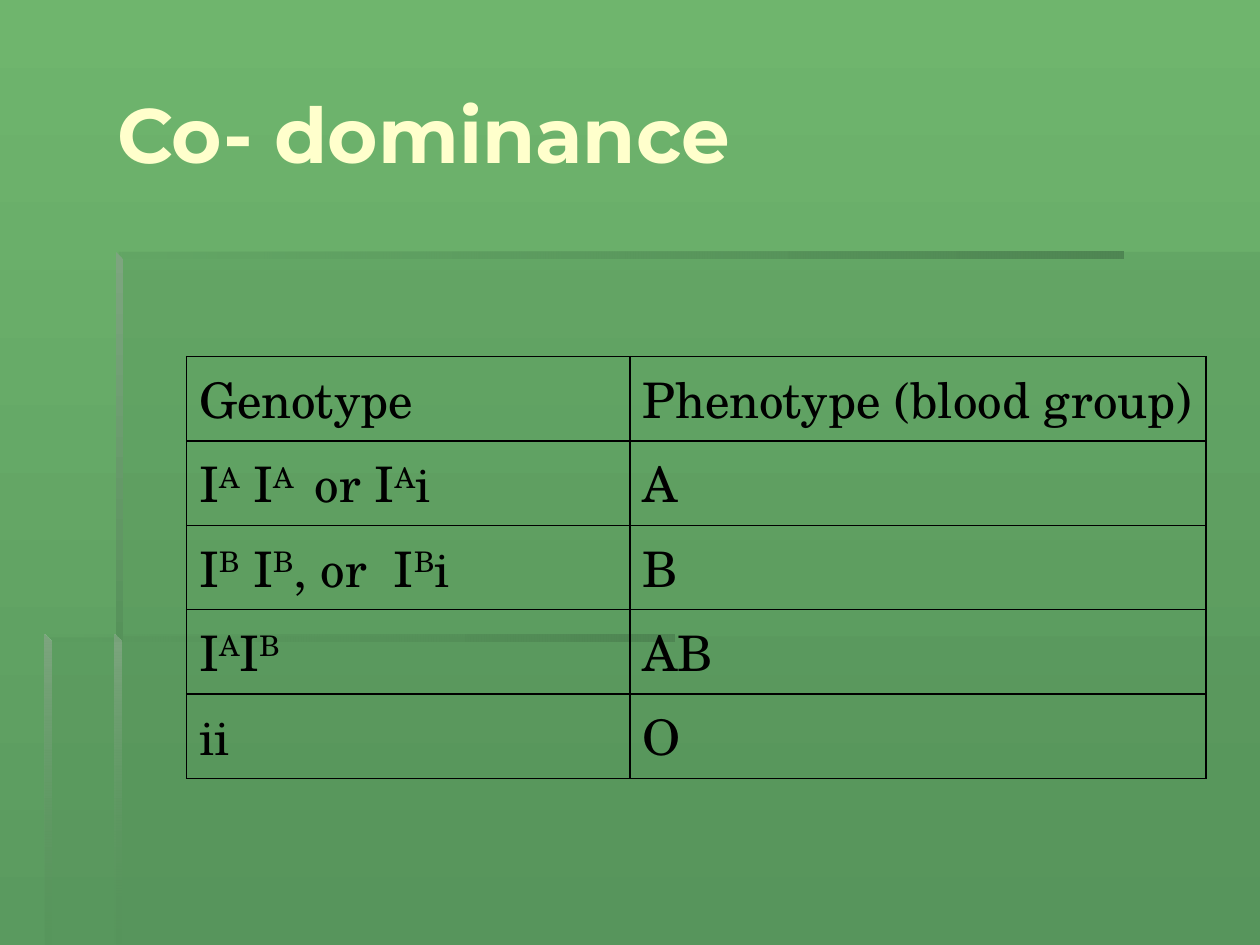
"""Build the co-dominance slide with its blood group table."""
from dataclasses import dataclass

from lxml import etree
from pptx import Presentation
from pptx.dml.color import RGBColor
from pptx.enum.text import MSO_ANCHOR, PP_ALIGN
from pptx.oxml.ns import qn
from pptx.util import Cm, Pt

MIDDLE = MSO_ANCHOR.MIDDLE
JUSTIFY = PP_ALIGN.JUSTIFY
RIGHTWARD, DOWNWARD = 0, 270
COLORS = {
    "sky": "6FB56D", "ground": "5A9A5F", "panel": "56925A", "dark": "4F8653",
    "light": "7DA57F", "title": "FFFFCC", "ink": "000000",
}
WIDTH, HEIGHT, THICKNESS = 25.4, 19.05, 0.14
COLUMN_WIDTHS = (8.94, 11.61)
ROW_HEIGHT = 1.7
# Every second piece between bars is superscript.
ROWS = (
    ("Genotype", "Phenotype (blood group)"),
    ("I|A| I|A | or I|A|i", "A"),
    ("I|B| I|B|, or  I|B|i", "B"),
    ("I|A|I|B", "AB"),
    ("ii", "O"),
)


@dataclass
class Bar:
    """A thin gradient strip, horizontal or running down with a mitred top."""
    left: float
    top: float
    length: float
    vertical: bool = False
    end_alpha: int = 100

    def points(self) -> list[tuple[float, float]]:
        """Return the outline in centimetres."""
        right = self.left + (THICKNESS if self.vertical else self.length)
        bottom = self.top + (self.length if self.vertical else THICKNESS)
        corner = (right, self.top + (THICKNESS if self.vertical else 0))
        return [(self.left, self.top), corner, (right, bottom), (self.left, bottom)]


PANELS = (
    [(2.34, 12.83), (2.34, HEIGHT), (WIDTH, HEIGHT), (WIDTH, 12.83)],
    [(2.39, 12.85), (0.91, 12.85), (0.91, HEIGHT), (WIDTH, HEIGHT),
     (WIDTH, 5.08), (2.39, 5.08)],
)
BARS = (
    Bar(2.34, 5.08, 20.3),
    Bar(2.34, 5.08, 7.87, vertical=True),
    Bar(2.31, 12.8, 6.25, vertical=True, end_alpha=0),
    Bar(0.89, 12.8, 12.7),
    Bar(0.89, 12.8, 6.25, vertical=True, end_alpha=10),
)


def color(name: str) -> RGBColor:
    """Look up a named colour."""
    return RGBColor.from_string(COLORS[name])


def set_gradient(fill, names: tuple[str, str], angle: int) -> None:
    """Give a fill a two-stop linear gradient."""
    fill.gradient()
    fill.gradient_angle = angle
    for stop, name in zip(fill.gradient_stops, names):
        stop.color.rgb = color(name)


def set_alphas(shape, alphas: tuple[int, ...]) -> None:
    """Set the opacity percentage of each fill colour in order."""
    for element, alpha in zip(shape._element.spPr.iter(qn("a:srgbClr")), alphas):
        if alpha < 100:
            etree.SubElement(element, qn("a:alpha"), val=str(alpha * 1000))


def add_outline(page, points: list[tuple[float, float]]):
    """Add a closed, unlined polygon given in centimetres."""
    start, *others = [(Cm(x), Cm(y)) for x, y in points]
    builder = page.shapes.build_freeform(*start)
    builder.add_line_segments(others, close=True)
    shape = builder.convert_to_shape()
    shape.shadow.inherit = False
    shape.line.fill.background()
    return shape


def add_panel(page, points: list[tuple[float, float]]) -> None:
    """Add a translucent panel."""
    panel = add_outline(page, points)
    panel.fill.solid()
    panel.fill.fore_color.rgb = color("panel")
    set_alphas(panel, (30,))


def add_bar(page, bar: Bar) -> None:
    """Add a gradient strip."""
    strip = add_outline(page, bar.points())
    if bar.vertical:
        set_gradient(strip.fill, ("light", "panel"), DOWNWARD)
        set_alphas(strip, (100, bar.end_alpha))
    else:
        set_gradient(strip.fill, ("panel", "dark"), RIGHTWARD)
        set_alphas(strip, (0, 100))


def set_font(font, name: str, size: int, color_name: str) -> None:
    """Set face, size and colour."""
    font.name, font.size = name, Pt(size)
    font.color.rgb = color(color_name)


def add_title(page, text: str) -> None:
    """Add the slide title."""
    box = page.shapes.add_textbox(Cm(2.11), Cm(0.69), Cm(23.29), Cm(3.99))
    box.text_frame.word_wrap = True
    box.text_frame.vertical_anchor = MIDDLE
    para = box.text_frame.paragraphs[0]
    para.text = text
    set_font(para.font, "Montserrat", 44, "title")
    para.font.bold = True


def fill_cell(cell, text: str) -> None:
    """Write a bordered, unfilled cell."""
    properties = cell._tc.get_or_add_tcPr()
    for side in ("a:lnL", "a:lnR", "a:lnT", "a:lnB"):
        border = etree.SubElement(properties, qn(side), w=str(Pt(1)))
        solid = etree.SubElement(border, qn("a:solidFill"))
        etree.SubElement(solid, qn("a:srgbClr"), val=COLORS["ink"])
    cell.fill.background()
    para = cell.text_frame.paragraphs[0]
    para.alignment = JUSTIFY
    set_font(para.font, "TeX Gyre Schola", 28, "ink")
    for index, piece in enumerate(text.split("|")):
        span = para.add_run()
        span.text = piece
        if index % 2:
            span.font._element.set("baseline", "30000")


def add_blood_table(page) -> None:
    """Add the genotype and phenotype table."""
    frame = page.shapes.add_table(
        len(ROWS), len(COLUMN_WIDTHS), Cm(3.76), Cm(7.19),
        Cm(sum(COLUMN_WIDTHS)), Cm(ROW_HEIGHT * len(ROWS)))
    table = frame.table
    table.first_row = table.horz_banding = False
    for column, width in zip(table.columns, COLUMN_WIDTHS):
        column.width = Cm(width)
    for row, texts in zip(table.rows, ROWS):
        row.height = Cm(ROW_HEIGHT)
        for cell, text in zip(row.cells, texts):
            fill_cell(cell, text)


def main() -> None:
    """Build and save the deck."""
    deck = Presentation()
    deck.slide_width, deck.slide_height = Cm(WIDTH), Cm(HEIGHT)
    page = deck.slides.add_slide(deck.slide_layouts[6])
    set_gradient(page.background.fill, ("sky", "ground"), DOWNWARD)
    for points in PANELS:
        add_panel(page, points)
    for bar in BARS:
        add_bar(page, bar)
    add_title(page, "Co- dominance")
    add_blood_table(page)
    deck.save("out.pptx")


if __name__ == "__main__":
    main()
